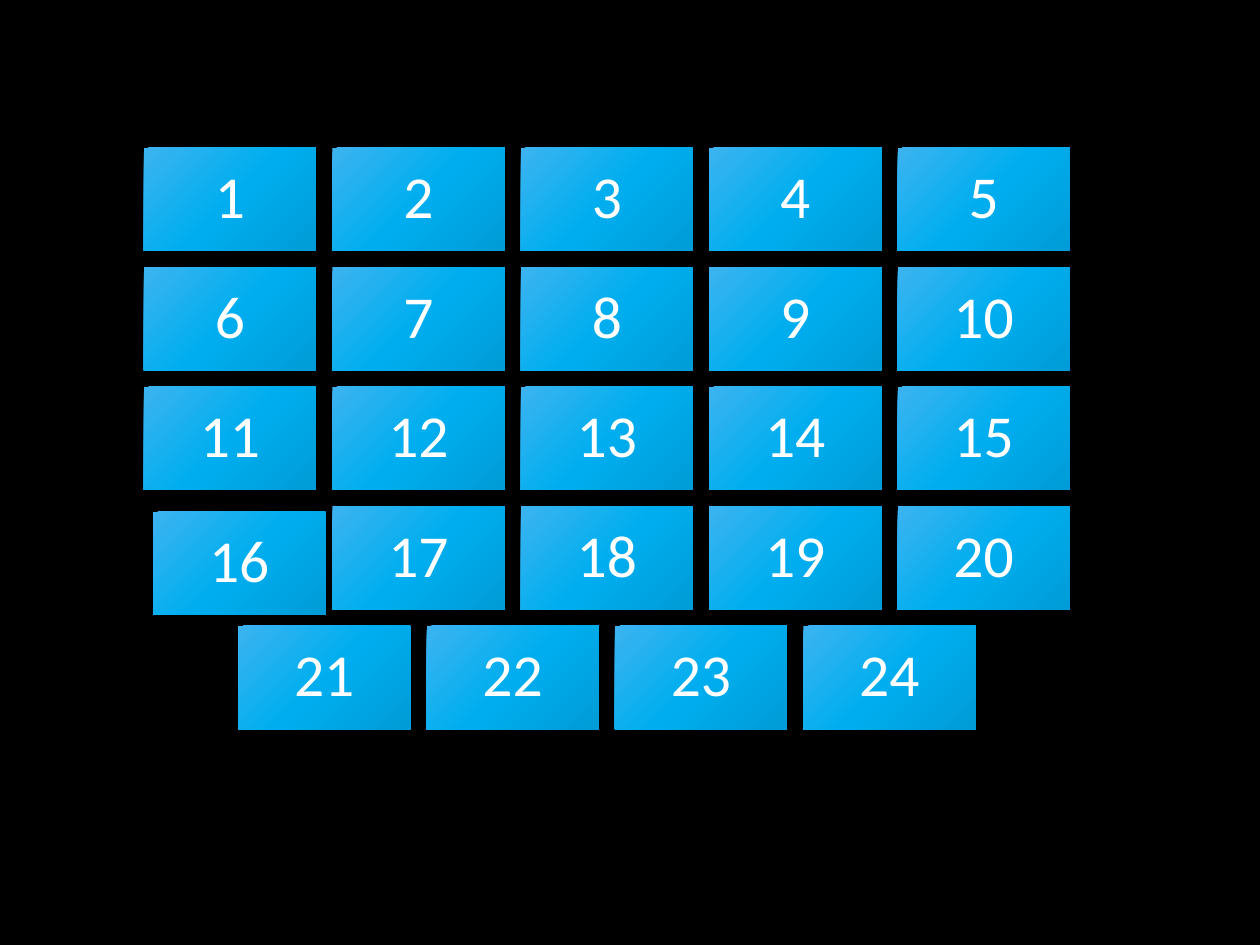
from lxml import etree
from pptx import Presentation
from pptx.dml.color import RGBColor
from pptx.enum.shapes import MSO_SHAPE
from pptx.enum.text import MSO_ANCHOR, PP_ALIGN
from pptx.oxml.ns import qn
from pptx.util import Pt

RECTANGLE = MSO_SHAPE.RECTANGLE
MIDDLE = MSO_ANCHOR.MIDDLE
CENTER = PP_ALIGN.CENTER

BLACK = RGBColor(0x00, 0x00, 0x00)
WHITE = RGBColor(0xFF, 0xFF, 0xFF)
TILE_GRADIENT = [
    (0, RGBColor(0x3D, 0xB3, 0xF0)),
    (50, RGBColor(0x00, 0xAE, 0xEF)),
    (100, RGBColor(0x00, 0x9C, 0xD7)),
]

# Content: numbered tiles, with one nudged off the grid
LAST_NUMBER = 24
COLUMNS = 5
NUDGES = {16: (5.3, 3.1)}

# Layout in points
SLIDE_W, SLIDE_H = 720, 540
GRID_LEFT, GRID_TOP = 82.3, 84.3
TILE_W, TILE_H = 98.3, 59
GAP = 9.35
PADDING = 10.2


def fill_gradient(tile):
    tile.fill.gradient()
    tile.fill.gradient_angle = 315  # top left to bottom right
    stops = tile._element.spPr.find(qn("a:gradFill")).find(qn("a:gsLst"))
    for stop in list(stops):
        stops.remove(stop)
    for percent, color in TILE_GRADIENT:
        stop = etree.SubElement(stops, qn("a:gs"), pos=str(percent * 1000))
        etree.SubElement(stop, qn("a:srgbClr"), val=str(color))


def add_tile(tiles, number, left, top):
    tile = tiles.shapes.add_shape(RECTANGLE, Pt(left), Pt(top), Pt(TILE_W), Pt(TILE_H))
    tile.shadow.inherit = False
    tile.line.fill.background()
    fill_gradient(tile)

    frame = tile.text_frame
    frame.text = str(number)
    frame.word_wrap = True
    frame.vertical_anchor = MIDDLE
    frame.margin_left = frame.margin_right = Pt(PADDING)
    frame.margin_top = frame.margin_bottom = Pt(PADDING)
    label = frame.paragraphs[0]
    label.alignment = CENTER
    label.line_spacing = 0.9
    font = label.runs[0].font
    font.name = "Calibri"
    font.size = Pt(34)
    font.color.rgb = WHITE


def main():
    prs = Presentation()
    prs.slide_width, prs.slide_height = Pt(SLIDE_W), Pt(SLIDE_H)
    slide = prs.slides.add_slide(prs.slide_layouts[6])
    slide.background.fill.solid()
    slide.background.fill.fore_color.rgb = BLACK

    # Rows of tiles; a short last row is centred under the others
    tiles = slide.shapes.add_group_shape()
    for index in range(LAST_NUMBER):
        number = index + 1
        row, column = divmod(index, COLUMNS)
        row_length = min(COLUMNS, LAST_NUMBER - row * COLUMNS)
        indent = (COLUMNS - row_length) / 2
        dx, dy = NUDGES.get(number, (0, 0))
        left = GRID_LEFT + (column + indent) * (TILE_W + GAP) + dx
        top = GRID_TOP + row * (TILE_H + GAP) + dy
        add_tile(tiles, number, left, top)

    prs.save("out.pptx")


if __name__ == "__main__":
    main()
